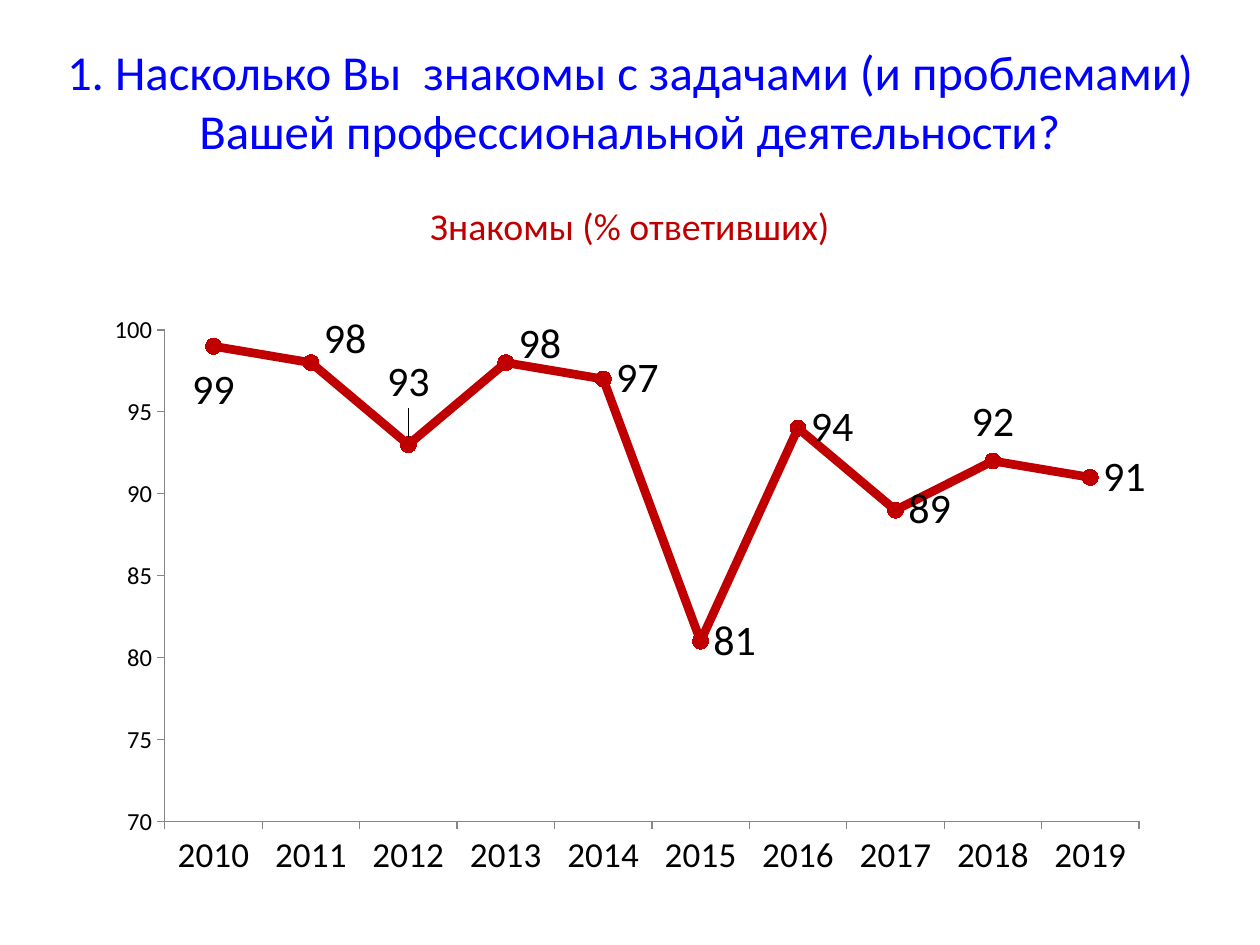
from pptx import Presentation
from pptx.chart.data import CategoryChartData
from pptx.dml.color import RGBColor
from pptx.enum.chart import XL_CHART_TYPE, XL_LABEL_POSITION, XL_MARKER_STYLE, XL_TICK_MARK
from pptx.enum.text import MSO_ANCHOR, PP_ALIGN
from pptx.oxml import parse_xml
from pptx.oxml.ns import nsdecls, qn
from pptx.util import Inches, Pt

FONT = "Calibri"
BLUE, RED, BLACK, GRAY = "0000FF", "C00000", "000000", "868686"
YEARS = [str(year) for year in range(2010, 2020)]
SHARES = [99, 98, 93, 98, 97, 81, 94, 89, 92, 91]
POINT_LABELS = {
    0: (XL_LABEL_POSITION.BELOW, 0.01),
    1: (XL_LABEL_POSITION.RIGHT, -0.04),
    2: (XL_LABEL_POSITION.ABOVE, -0.04),
    3: (XL_LABEL_POSITION.RIGHT, -0.03),
    8: (XL_LABEL_POSITION.ABOVE, 0),
}


def color(value):
    """Turn a hex string into a colour."""
    return RGBColor.from_string(value)


def format_font(font, size, value=BLACK):
    """Set the typeface, size and colour of a font."""
    font.name, font.size, font.bold = FONT, Pt(size), False
    font.color.rgb = color(value)


def manual_layout(**settings):
    """Make a chart layout element from its settings."""
    items = "".join(f'<c:{name} val="{value}"/>' for name, value in settings.items())
    return parse_xml(f'<c:layout {nsdecls("c")}><c:manualLayout>{items}</c:manualLayout></c:layout>')


def add_title_line(paragraph, text, size, value):
    """Write one centred paragraph of the title."""
    paragraph.alignment = PP_ALIGN.CENTER
    run = paragraph.add_run()
    run.text = text
    format_font(run.font, size, value)


def fill_title(title):
    """Place the title and write the question and the measure."""
    title.left, title.top, title.width, title.height = (
        Inches(0), Inches(0.29), Inches(10), Inches(1.72))
    frame = title.text_frame
    frame.word_wrap = True
    frame.vertical_anchor = MSO_ANCHOR.MIDDLE
    add_title_line(frame.paragraphs[0],
                   "1. Насколько Вы  знакомы с задачами (и проблемами) "
                   "Вашей профессиональной деятельности?", 27.9, BLUE)
    measure = frame.add_paragraph()
    measure.space_before = Pt(25)
    add_title_line(measure, "Знакомы (% ответивших)", 21.6, RED)


def format_axis(axis, size):
    """Style an axis with outside ticks and no gridlines."""
    axis.has_major_gridlines = False
    axis.major_tick_mark = XL_TICK_MARK.OUTSIDE
    axis.minor_tick_mark = XL_TICK_MARK.NONE
    axis.format.line.color.rgb = color(GRAY)
    axis.format.line.width = Pt(0.75)
    format_font(axis.tick_labels.font, size)


def format_series(series):
    """Style the line, its markers and its value labels."""
    series.smooth = False
    series.format.line.color.rgb = color(RED)
    series.format.line.width = Pt(5)
    marker = series.marker
    marker.style, marker.size = XL_MARKER_STYLE.CIRCLE, 9
    marker.format.fill.solid()
    marker.format.fill.fore_color.rgb = color(RED)
    marker.format.line.color.rgb = color(RED)
    labels = series.data_labels
    labels.show_value = True
    labels.position = XL_LABEL_POSITION.RIGHT
    format_font(labels.font, 24)
    for index, (position, _) in POINT_LABELS.items():
        label = series.points[index].data_label
        format_font(label.font, 24)
        label.position = position


def place_chart_parts(chart):
    """Fix the plot area and shift the labels that need room."""
    plot_area = chart.element.find(f".//{qn('c:plotArea')}")
    for layout in plot_area.findall(qn("c:layout")):
        plot_area.remove(layout)
    plot_area.insert(0, manual_layout(layoutTarget="inner", xMode="edge", yMode="edge",
                                      x=0.066, y=0.045, w=0.914, h=0.839))
    for label in chart.element.iter(qn("c:dLbl")):
        index = label.find(qn("c:idx"))
        shift = POINT_LABELS[int(index.get("val"))][1]
        if shift:
            index.addnext(manual_layout(x=0, y=shift))


def add_line_chart(slide):
    """Add the chart of yearly shares."""
    data = CategoryChartData()
    data.categories = YEARS
    data.add_series("Series 1", SHARES)
    chart = slide.shapes.add_chart(
        XL_CHART_TYPE.LINE_MARKERS, Inches(0.75), Inches(2.41),
        Inches(8.46), Inches(4.65), data).chart
    chart.has_title = chart.has_legend = False
    format_font(chart.font, 17.9)
    chart.plots[0].vary_by_categories = False
    format_axis(chart.category_axis, 20)
    format_axis(chart.value_axis, 14)
    chart.value_axis.minimum_scale = 70
    chart.value_axis.maximum_scale = 100
    chart.value_axis.major_unit = 5
    format_series(chart.plots[0].series[0])
    place_chart_parts(chart)


def main():
    """Build and save the slide."""
    presentation = Presentation()
    presentation.slide_width, presentation.slide_height = Inches(10), Inches(7.5)
    slide = presentation.slides.add_slide(presentation.slide_layouts[5])
    fill_title(slide.shapes.title)
    add_line_chart(slide)
    presentation.save("out.pptx")


if __name__ == "__main__":
    main()
